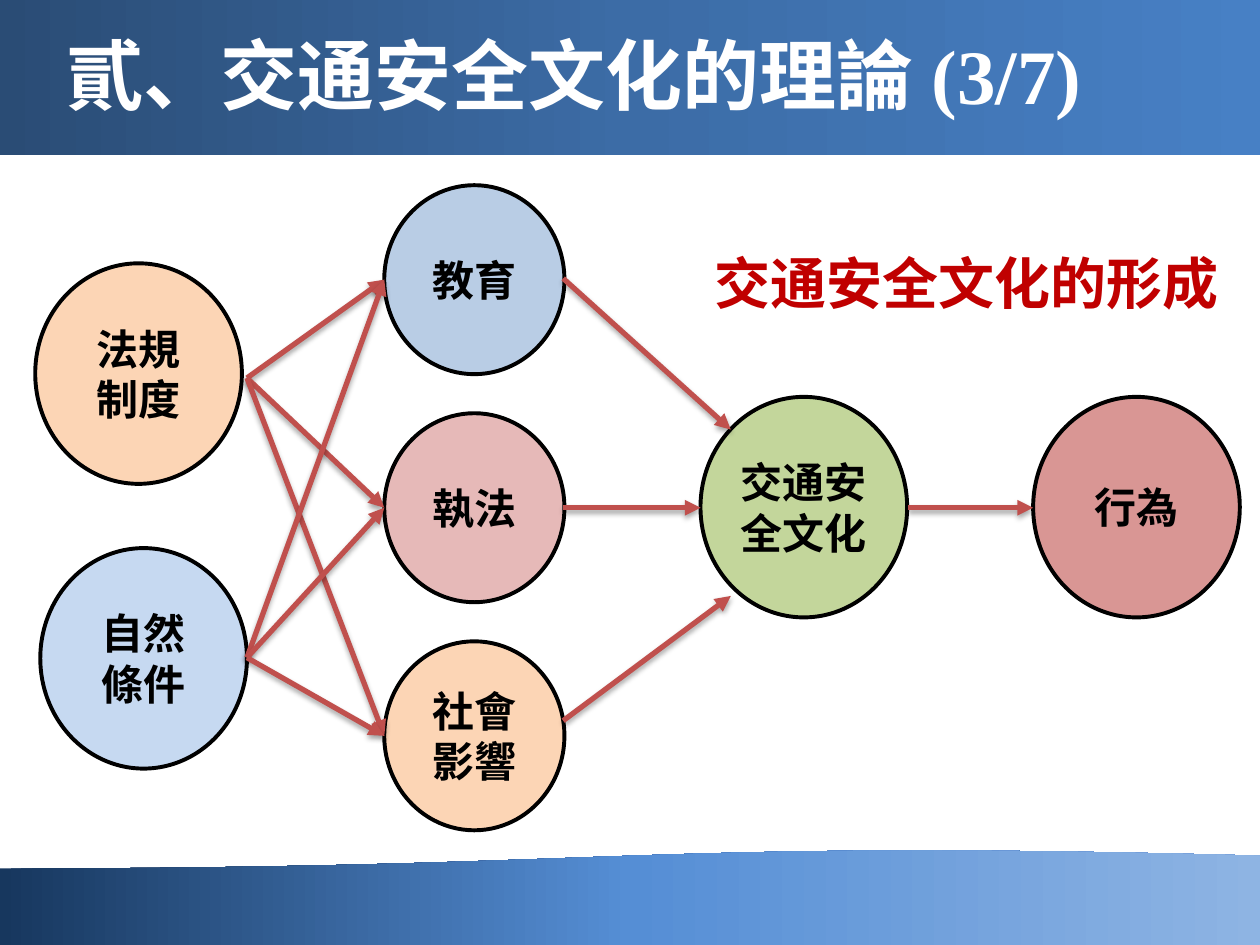
from dataclasses import dataclass
from itertools import product
from typing import Sequence

from lxml import etree
from pptx import Presentation
from pptx.dml.color import RGBColor
from pptx.enum import shapes, text
from pptx.oxml import parse_xml
from pptx.oxml.ns import nsdecls, qn
from pptx.util import Inches, Pt


@dataclass(frozen=True)
class Theme:
    latin: str = "Times New Roman"
    cjk: str = "Noto Sans CJK SC"
    black: str = "000000"
    white: str = "FFFFFF"
    red: str = "C00000"
    arrow: str = "C0504D"
    peach: str = "FCD5B5"
    title_size: int = 44
    heading_size: int = 32
    node_size: int = 24
    header: tuple = ("2A4C75", "3C6CA6", "4780C5")
    footer: tuple = ("17375E", "558ED5", "8EB4E3")


@dataclass(frozen=True)
class Node:
    lines: tuple
    x: float
    y: float
    w: float
    h: float
    color: str


@dataclass(frozen=True)
class Arrow:
    start: tuple
    end: tuple


T = Theme()
BIG = (1.64, 1.75)
SMALL = (1.43, 1.5)
MID_Y = 4.03
FACTOR_X, FACTOR_TOP, FACTOR_STEP = 3.05, 1.47, 1.81

FACTORS = [(("教育",), "B9CDE5"), (("執法",), "E6B9B8"), (("社會影響",), T.peach)]
NODES = [
    Node(("行為",), 8.2, 3.15, *BIG, "D99694"),
    Node(("交通安全文化",), 5.56, 3.15, *BIG, "C3D69B"),
    *(Node(lines, FACTOR_X, FACTOR_TOP + i * FACTOR_STEP, *SMALL, color)
      for i, (lines, color) in enumerate(FACTORS)),
    Node(("法規", "制度"), 0.28, 2.09, *BIG, T.peach),
    Node(("自然", "條件"), 0.32, 4.35, *BIG, "C6D9F1"),
]

CAUSES = [(1.96, 3.0), (1.96, 5.22)]
FACTOR_ENTRIES = [(FACTOR_X, MID_Y + i * FACTOR_STEP) for i in (-1, 0, 1)]
ARROWS = [Arrow(a, b) for a, b in product(CAUSES, FACTOR_ENTRIES)] + [
    Arrow((4.47, 2.21), (5.8, 3.41)),
    Arrow((4.47, MID_Y), (5.56, MID_Y)),
    Arrow((4.47, 5.72), (5.8, 4.73)),
    Arrow((7.21, MID_Y), (8.2, MID_Y)),
]


def write(tf, lines: Sequence[str], size: int, color: str, latin: str, align) -> None:
    frame = {"word_wrap": True, "vertical_anchor": text.MSO_ANCHOR.MIDDLE}
    for name, value in frame.items():
        setattr(tf, name, value)
    for i, line in enumerate(lines):
        p = tf.add_paragraph() if i else tf.paragraphs[0]
        p.alignment = align
        r = p.add_run()
        r.text = line
        for name, value in {"size": Pt(size), "bold": True, "name": latin}.items():
            setattr(r.font, name, value)
        r.font.color.rgb = RGBColor.from_string(color)
        ea = etree.SubElement(r.font._element, qn("a:ea"))
        ea.set("typeface", T.cjk)


def add_band(s, kind, y: float, h: float, colors: Sequence[str], turn: int) -> None:
    sp = s.shapes.add_shape(kind, 0, Inches(y), Inches(10), Inches(h))
    sp.rotation = turn
    sp.shadow.inherit = False
    sp.line.fill.background()
    stops = "".join(f'<a:gs pos="{i * 50000}"><a:srgbClr val="{c}"/></a:gs>'
                    for i, c in enumerate(colors))
    sp.fill.gradient()
    grad = sp._element.spPr.find(qn("a:gradFill"))
    grad.getparent().replace(grad, parse_xml(
        f'<a:gradFill {nsdecls("a")} rotWithShape="1"><a:gsLst>{stops}</a:gsLst>'
        f'<a:lin ang="{turn * 60000}" scaled="0"/></a:gradFill>'))


def add_node(s, n: Node) -> None:
    sp = s.shapes.add_shape(shapes.MSO_SHAPE.OVAL, *map(Inches, (n.x, n.y, n.w, n.h)))
    sp.shadow.inherit = False
    sp.fill.solid()
    sp.fill.fore_color.rgb = RGBColor.from_string(n.color)
    sp.line.color.rgb = RGBColor.from_string(T.black)
    sp.line.width = Pt(2.25)
    tf = sp.text_frame
    margins = {"margin_left": 0.03, "margin_right": 0.03,
               "margin_top": 0.05, "margin_bottom": 0.05}
    for name, value in margins.items():
        setattr(tf, name, Inches(value))
    write(tf, n.lines, T.node_size, T.black, T.latin, text.PP_ALIGN.CENTER)


def add_arrow(s, a: Arrow) -> None:
    cx = s.shapes.add_connector(shapes.MSO_CONNECTOR.STRAIGHT,
                                *map(Inches, a.start + a.end))
    cx.line.color.rgb = RGBColor.from_string(T.arrow)
    cx.line.width = Pt(3)
    etree.SubElement(cx.line._get_or_add_ln(), qn("a:tailEnd")).set("type", "triangle")
    cx._element.spPr.append(parse_xml(
        f'<a:effectLst {nsdecls("a")}><a:outerShdw blurRad="{Pt(3.1)}" '
        f'dist="{Pt(1.8)}" dir="5400000" rotWithShape="0"><a:srgbClr val="{T.black}">'
        '<a:alpha val="35000"/></a:srgbClr></a:outerShdw></a:effectLst>'))


def add_label(s, box: Sequence[float], line: str, size: int, color: str,
              latin: str, align) -> None:
    tb = s.shapes.add_textbox(*map(Inches, box))
    write(tb.text_frame, [line], size, color, latin, align)


def main() -> None:
    prs = Presentation()
    prs.slide_width, prs.slide_height = Inches(10), Inches(7.5)
    s = prs.slides.add_slide(prs.slide_layouts[6])
    add_band(s, shapes.MSO_SHAPE.FLOWCHART_DOCUMENT, 6.74, 0.77, T.footer, 180)
    add_band(s, shapes.MSO_SHAPE.RECTANGLE, 0, 1.23, T.header, 0)
    for node in NODES:
        add_node(s, node)
    for arrow in ARROWS:
        add_arrow(s, arrow)
    add_label(s, (0.43, 0.19, 9.41, 0.79), "貳、交通安全文化的理論 (3/7)",
              T.title_size, T.white, T.latin, text.PP_ALIGN.LEFT)
    add_label(s, (5.51, 1.92, 4.33, 0.64), "交通安全文化的形成",
              T.heading_size, T.red, T.cjk, text.PP_ALIGN.CENTER)
    prs.save("out.pptx")


if __name__ == "__main__":
    main()
